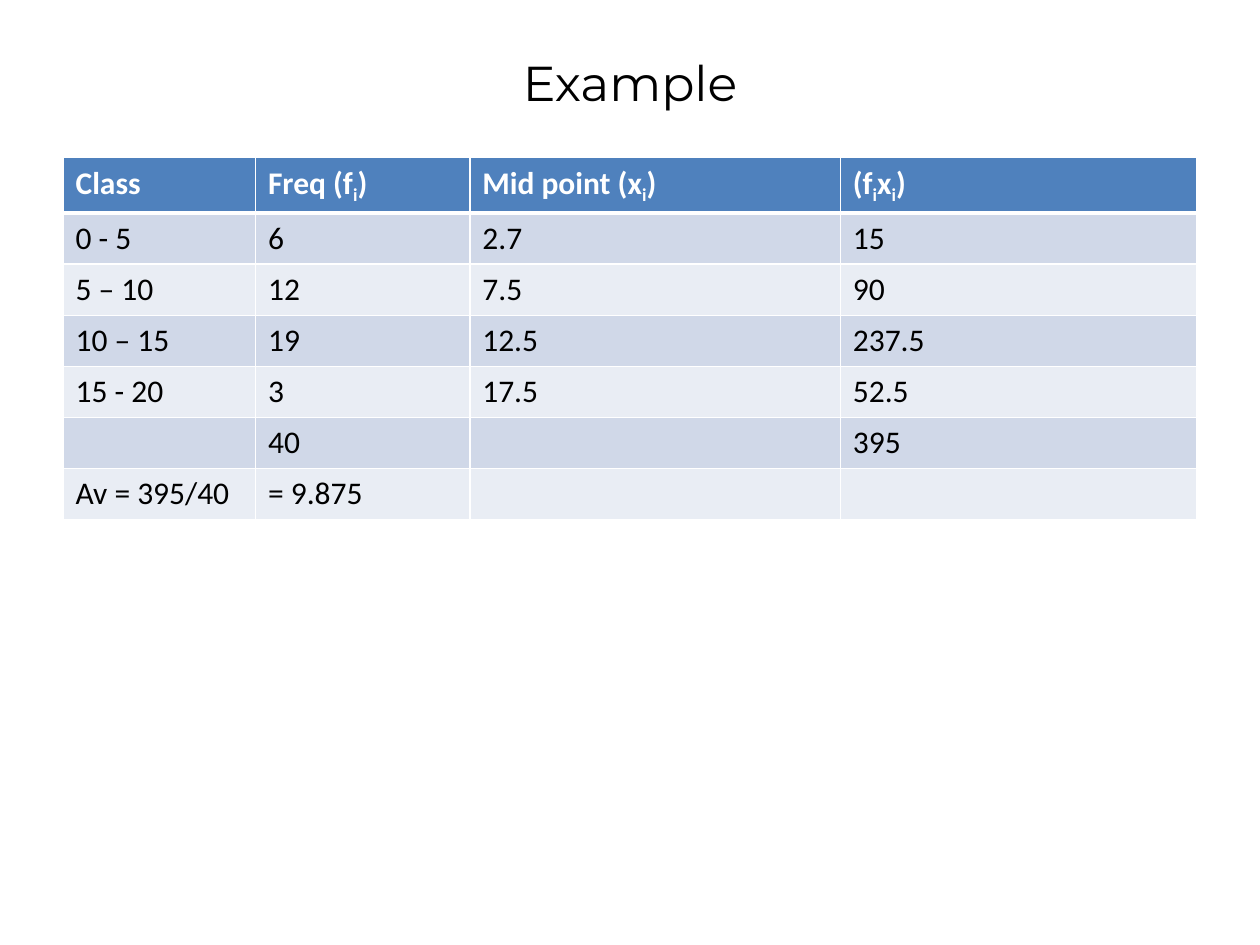
import pptx
import pptx.util
import pptx.dml.color
import pptx.enum.text
from dataclasses import dataclass
from lxml import etree

Cm, Pt = pptx.util.Cm, pptx.util.Pt
RGB = pptx.dml.color.RGBColor.from_string

TITLE = "Example"
# Text between underscores is set as subscript.
ROWS = [
    ("Class", "Freq (f_i_)", "Mid point (x_i_)", "(f_i_x_i_)"),
    ("0 - 5", "6", "2.7", "15"),
    ("5 – 10", "12", "7.5", "90"),
    ("10 – 15", "19", "12.5", "237.5"),
    ("15 - 20", "3", "17.5", "52.5"),
    ("", "40", "", "395"),
    ("Av = 395/40", "= 9.875", "", ""),
]
WIDTHS = (3.88, 4.32, 7.47, 7.19)
LEFT, WIDE, HIGH = 1.27, 22.86, 1.03


@dataclass
class Theme:
    head: str = "4F81BD"
    bands: tuple = ("D0D8E8", "E9EDF4")
    ink: str = "000000"
    light: str = "FFFFFF"
    title_font: str = "Montserrat"
    body_font: str = "Calibri"
    title_size: int = 28
    body_size: int = 18


THEME = Theme()


def style(run, font, size, color, bold=False):
    run.font.name, run.font.size, run.font.bold = font, Pt(size), bold
    run.font.color.rgb = RGB(color)


def border(cell, side, width):
    props = cell._tc.get_or_add_tcPr()
    space = pptx.oxml.ns.qn
    line = etree.SubElement(props, space("a:ln" + side), w=str(Pt(width)))
    fill = etree.SubElement(line, space("a:solidFill"))
    etree.SubElement(fill, space("a:srgbClr"), val=THEME.light)


def write(cell, text, head):
    para = cell.text_frame.paragraphs[0]
    color = THEME.light if head else THEME.ink
    for pos, part in enumerate(text.split("_")):
        if part:
            run = para.add_run()
            run.text = part
            style(run, THEME.body_font, THEME.body_size, color, head)
            if pos % 2:
                run._r.get_or_add_rPr().set("baseline", "-25000")


def add_title(slide):
    title = slide.shapes.title
    title.left, title.top = Cm(LEFT), Cm(0.76)
    title.width, title.height = Cm(WIDE), Cm(1.78)
    frame = title.text_frame
    frame.text = TITLE
    frame.vertical_anchor = pptx.enum.text.MSO_ANCHOR.MIDDLE
    para = frame.paragraphs[0]
    para.alignment = pptx.enum.text.PP_ALIGN.CENTER
    style(para.runs[0], THEME.title_font, THEME.title_size, THEME.ink)


def add_grid(slide):
    grid = slide.shapes.add_table(
        len(ROWS), len(WIDTHS), Cm(LEFT), Cm(3.18), Cm(WIDE), Cm(HIGH * len(ROWS))
    ).table
    for col, width in zip(grid.columns, WIDTHS):
        col.width = Cm(width)
    for r, row in enumerate(ROWS):
        grid.rows[r].height = Cm(HIGH)
        shade = THEME.bands[(r - 1) % 2] if r else THEME.head
        for c, text in enumerate(row):
            cell = grid.cell(r, c)
            write(cell, text, r == 0)
            for side in "LRTB":
                thick = (r, side) in ((0, "B"), (1, "T"))
                border(cell, side, 3 if thick else 1)
            cell.fill.solid()
            cell.fill.fore_color.rgb = RGB(shade)


def main():
    deck = pptx.Presentation()
    deck.slide_width, deck.slide_height = Cm(25.4), Cm(19.05)
    slide = deck.slides.add_slide(deck.slide_layouts[5])
    add_title(slide)
    add_grid(slide)
    deck.save("out.pptx")


if __name__ == "__main__":
    main()
